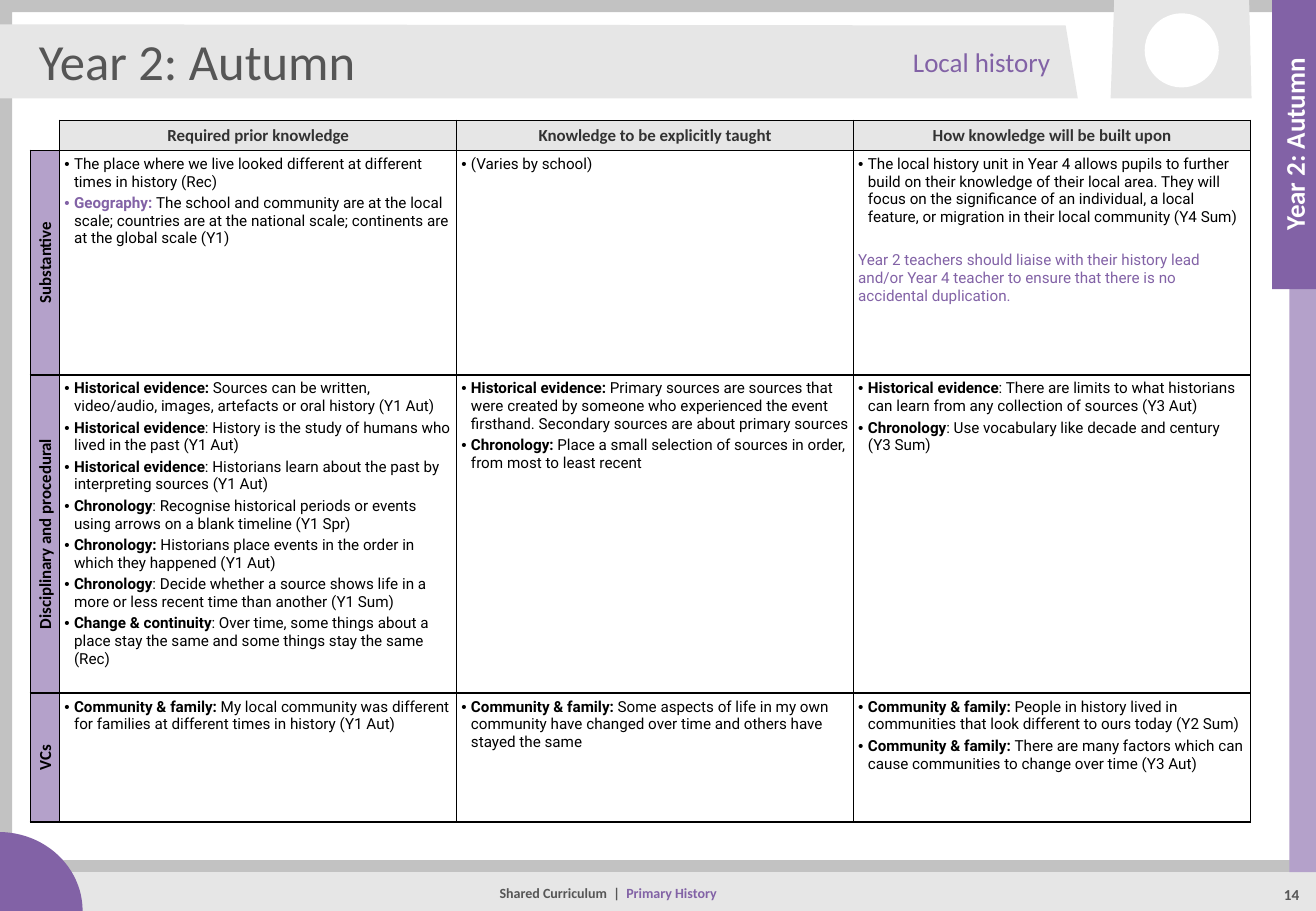
from dataclasses import dataclass

from lxml import etree
from pptx import Presentation
from pptx.dml.color import RGBColor
from pptx.enum.shapes import MSO_CONNECTOR, MSO_SHAPE
from pptx.enum.text import MSO_ANCHOR, PP_ALIGN
from pptx.oxml.ns import qn
from pptx.util import Inches, Pt

LEFT, CENTER, RIGHT = PP_ALIGN.LEFT, PP_ALIGN.CENTER, PP_ALIGN.RIGHT
MIDDLE, TOP = MSO_ANCHOR.MIDDLE, MSO_ANCHOR.TOP
RECTANGLE, FRAME, OVAL, ARC = (MSO_SHAPE.RECTANGLE, MSO_SHAPE.FRAME,
                               MSO_SHAPE.OVAL, MSO_SHAPE.ARC)
STRAIGHT = MSO_CONNECTOR.STRAIGHT

PURPLE, LILAC, WHITE, BLACK = "8262A6", "B4A1CA", "FFFFFF", "000000"
PALE, SILVER, SLATE, CHARCOAL = "E6E6E6", "C2C2C2", "565656", "323232"
HEADING_FONT, BODY_FONT = "Calibri", "Roboto"
TABLE_WIDTH, LABEL_WIDTH = 10.04, 0.24


@dataclass
class Panel:
    kind: int
    left: float
    top: float
    width: float
    height: float
    color: str


@dataclass
class Point:
    text: str
    lead: str = ""
    lead_color: str = BLACK


@dataclass
class Note:
    """An unbulleted purple remark set apart from the points above it."""
    text: str


@dataclass
class Strand:
    label: str
    height: float
    columns: list


EVIDENCE, TIME, FAMILY = "Historical evidence", "Chronology", "Community & family: "

PANELS = [
    Panel(FRAME, 0, 0, 10.83, 7.5, SILVER),
    Panel(RECTANGLE, 0.1, 7.18, 10.73, 0.32, PALE),
    Panel(ARC, -0.7, 6.85, 1.38, 1.3, PURPLE),
    Panel(RECTANGLE, 10.61, 0, 0.22, 7.18, LILAC),
    Panel(RECTANGLE, 10.47, 0, 0.36, 2.38, PURPLE),
]
TITLE_BAND = [(0, 0.2), (8.77, 0.21), (8.87, 0.81), (0, 0.81)]
TOP_TAB = [(9.17, 0), (10.28, 0), (10.3, 0.81), (9.14, 0.81)]

HEADINGS = ["Required prior knowledge", "Knowledge to be explicitly taught",
            "How knowledge will be built upon"]
STRANDS = [
    Strand("Substantive", 1.85, [
        [Point("The place where we live looked different at different times in history (Rec)"),
         Point("The school and community are at the local scale; countries are at the national "
               "scale; continents are at the global scale (Y1)", "Geography: ", PURPLE)],
        [Point("(Varies by school)")],
        [Point("The local history unit in Year 4 allows pupils to further build on their "
               "knowledge of their local area. They will focus on the significance of an "
               "individual, a local feature, or migration in their local community (Y4 Sum)"),
         Note("Year 2 teachers should liaise with their history lead and/or Year 4 teacher to "
              "ensure that there is no accidental duplication.")],
    ]),
    Strand("Disciplinary and procedural", 2.62, [
        [Point("Sources can be written, video/audio, images, artefacts or oral history (Y1 Aut)",
               EVIDENCE + ": "),
         Point(": History is the study of humans who lived in the past (Y1 Aut)", EVIDENCE),
         Point(": Historians learn about the past by interpreting sources (Y1 Aut)", EVIDENCE),
         Point(": Recognise historical periods or events using arrows on a blank timeline "
               "(Y1 Spr)", TIME),
         Point("Historians place events in the order in which they happened (Y1 Aut)",
               TIME + ": "),
         Point(": Decide whether a source shows life in a more or less recent time than "
               "another (Y1 Sum)", TIME),
         Point(": Over time, some things about a place stay the same and some things stay "
               "the same (Rec)", "Change & continuity")],
        [Point("Primary sources are sources that were created by someone who experienced the "
               "event firsthand. Secondary sources are about primary sources",
               EVIDENCE + ": "),
         Point("Place a small selection of sources in order, from most to least recent",
               TIME + ": ")],
        [Point(": There are limits to what historians can learn from any collection of "
               "sources (Y3 Aut)", EVIDENCE),
         Point(": Use vocabulary like decade and century (Y3 Sum)", TIME)],
    ]),
    Strand("VCs", 1.06, [
        [Point("My local community was different for families at different times in history "
               "(Y1 Aut)", FAMILY)],
        [Point("Some aspects of life in my own community have changed over time and others "
               "have stayed the same", FAMILY)],
        [Point("People in history lived in communities that look different to ours today "
               "(Y2 Sum)", FAMILY),
         Point("There are many factors which can cause communities to change over time "
               "(Y3 Aut)", FAMILY)],
    ]),
]


def rgb(color: str) -> RGBColor:
    return RGBColor.from_string(color)


def style_font(font, size: float, color: str, bold: bool = False, name: str = HEADING_FONT):
    font.name, font.size, font.bold = name, Pt(size), bold
    font.color.rgb = rgb(color)


def paint(shape, color: str):
    shape.shadow.inherit = False
    shape.fill.solid()
    shape.fill.fore_color.rgb = rgb(color)
    shape.line.fill.background()


def add_panel(page, panel: Panel):
    shape = page.shapes.add_shape(panel.kind, Inches(panel.left), Inches(panel.top),
                                  Inches(panel.width), Inches(panel.height))
    paint(shape, panel.color)
    if panel.kind == FRAME:
        shape.adjustments[0] = 0.1 / panel.height


def add_outline(page, points: list, color: str):
    corners = [(Inches(x), Inches(y)) for x, y in points]
    builder = page.shapes.build_freeform(*corners[0])
    builder.add_line_segments(corners[1:])
    paint(builder.convert_to_shape(), color)


def add_footer_rule(page):
    rule = page.shapes.add_connector(STRAIGHT, Inches(0.05), Inches(7.13),
                                     Inches(10.83), Inches(7.13))
    rule.line.color.rgb = rgb(SILVER)
    rule.line.width = Pt(7)
    etree.SubElement(rule._element.spPr, qn("a:effectLst"))


def write_line(box, text: str, size: float, color: str, align: int, bold: bool = False):
    frame = box.text_frame
    frame.word_wrap = True
    frame.vertical_anchor = MIDDLE
    para = frame.paragraphs[0]
    para.text, para.alignment = text, align
    style_font(para.font, size, color, bold)
    return para


def add_box(page, left: float, top: float, width: float, height: float):
    return page.shapes.add_textbox(Inches(left), Inches(top), Inches(width), Inches(height))


def format_cell(cell, anchor: int, fill: str = "", borders: str = "LRTB"):
    cell.margin_left = cell.margin_right = cell.margin_top = cell.margin_bottom = Inches(0.04)
    cell.vertical_anchor = anchor
    draw_borders(cell, borders)
    if fill:
        cell.fill.solid()
        cell.fill.fore_color.rgb = rgb(fill)
    else:
        cell.fill.background()


def draw_borders(cell, visible: str):
    properties = cell._tc.get_or_add_tcPr()
    for side in "LRTB":
        line = etree.SubElement(properties, qn(f"a:ln{side}"), w=str(Pt(1)))
        if side in visible:
            solid = etree.SubElement(line, qn("a:solidFill"))
            etree.SubElement(solid, qn("a:srgbClr"), val=BLACK)
        else:
            etree.SubElement(line, qn("a:noFill"))


def write_label(cell, text: str, color: str, fill: str):
    format_cell(cell, MIDDLE, fill)
    para = cell.text_frame.paragraphs[0]
    para.text, para.alignment = text, CENTER
    style_font(para.font, 10, color, True)


def write_entries(cell, entries: list):
    format_cell(cell, TOP, WHITE)
    for index, entry in enumerate(entries):
        para = cell.text_frame.add_paragraph() if index else cell.text_frame.paragraphs[0]
        para.space_after = Pt(2)
        if isinstance(entry, Note):
            para.space_before = Pt(12.7)
            para.text = entry.text
            style_font(para.font, 9, PURPLE, name=BODY_FONT)
            continue
        properties = para._p.get_or_add_pPr()
        properties.set("marL", str(Inches(0.08)))
        properties.set("indent", str(Inches(-0.08)))
        etree.SubElement(properties, qn("a:buFont"), typeface="Arial")
        etree.SubElement(properties, qn("a:buChar"), char="•")
        style_font(para.font, 9, BLACK, name=BODY_FONT)
        if entry.lead:
            span = para.add_run()
            span.text = entry.lead
            span.font.bold = True
            span.font.color.rgb = rgb(entry.lead_color)
        para.add_run().text = entry.text


def add_knowledge_table(page):
    column_width = (TABLE_WIDTH - LABEL_WIDTH) / len(HEADINGS)
    widths = [LABEL_WIDTH] + [column_width] * len(HEADINGS)
    heights = [0.24] + [strand.height for strand in STRANDS]
    table = page.shapes.add_table(len(heights), len(widths), Inches(0.25), Inches(0.99),
                                  Inches(TABLE_WIDTH), Inches(sum(heights))).table
    table.first_row = table.horz_banding = False
    for column, width in zip(table.columns, widths):
        column.width = Inches(width)
    for row, height in zip(table.rows, heights):
        row.height = Inches(height)
    corner = table.cell(0, 0)
    format_cell(corner, MIDDLE, borders="RB")
    etree.SubElement(corner.text_frame.paragraphs[0]._p, qn("a:endParaRPr"), sz="900")
    for number, heading in enumerate(HEADINGS, 1):
        write_label(table.cell(0, number), heading, CHARCOAL, PALE)
    for row_number, strand in enumerate(STRANDS, 1):
        label = table.cell(row_number, 0)
        write_label(label, strand.label, BLACK, LILAC)
        label._tc.get_or_add_tcPr().set("vert", "vert270")
        for number, entries in enumerate(strand.columns, 1):
            write_entries(table.cell(row_number, number), entries)


def main():
    deck = Presentation()
    deck.slide_width, deck.slide_height = Inches(10.83), Inches(7.5)
    page = deck.slides.add_slide(deck.slide_layouts[5])
    add_panel(page, PANELS[0])
    add_panel(page, PANELS[1])
    add_footer_rule(page)
    for panel in PANELS[2:]:
        add_panel(page, panel)
    add_outline(page, TITLE_BAND, PALE)
    add_outline(page, TOP_TAB, PALE)
    add_panel(page, Panel(OVAL, 9.42, 0.11, 0.61, 0.61, WHITE))

    title = page.shapes.title
    title.left, title.top, title.width, title.height = map(Inches, (0.22, 0.25, 3.43, 0.5))
    write_line(title, "Year 2: Autumn", 30, SLATE, LEFT)
    page.shapes._spTree.append(title._element)
    side_label = add_box(page, 9.46, 1.02, 2.38, 0.34)
    side_label.rotation = 270
    write_line(side_label, "Year 2: Autumn", 16, WHITE, CENTER, True)
    write_line(add_box(page, 3.73, 0.26, 5.01, 0.5), "Local history", 16, PURPLE, RIGHT)
    footer = write_line(add_box(page, 2.05, 7.2, 5.91, 0.3), "Shared Curriculum  |  ",
                        8.3, SLATE, CENTER, True)
    subject = footer.add_run()
    subject.text = "Primary History"
    subject.font.color.rgb = rgb(PURPLE)
    write_line(add_box(page, 10.31, 7.22, 0.64, 0.28), "14", 9, SLATE, CENTER, True)
    add_knowledge_table(page)
    deck.save("out.pptx")


if __name__ == "__main__":
    main()
